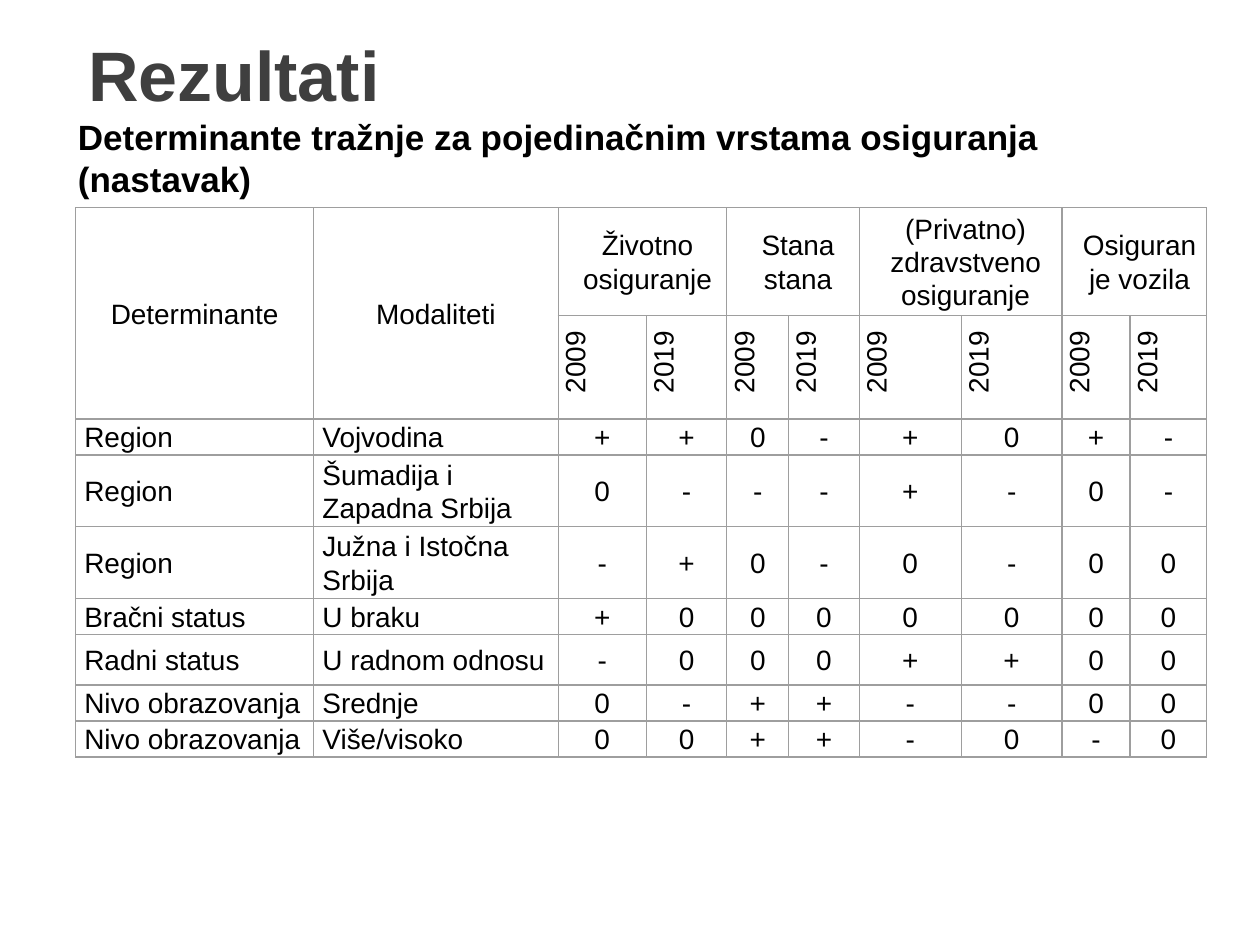
from lxml.etree import SubElement
from pptx import Presentation
from pptx.dml.color import RGBColor as RGB
from pptx.enum.text import MSO_ANCHOR as Anchor, PP_ALIGN as Align
from pptx.oxml import parse_xml
from pptx.oxml.ns import nsdecls, qn
from pptx.util import Inches, Pt


def style(para, size, color, bold=False):
    for run in para.runs:
        font = run.font
        font.name, font.size, font.bold = "Arial", Pt(size), bold
        font.color.rgb = RGB.from_string(color)


deck = Presentation()
deck.slide_width, deck.slide_height = Inches(10), Inches(7.5)
slide = deck.slides.add_slide(deck.slide_layouts[5])

title = slide.shapes.title
title.left, title.top = Inches(0.6), Inches(0.2)
title.width, title.height = Inches(8.48), Inches(1.15)
frame = title.text_frame
frame.text = "Rezultati"
frame.vertical_anchor = Anchor.TOP
frame.paragraphs[0].alignment = Align.LEFT
style(frame.paragraphs[0], 40, "3F3F3F", True)

box = slide.shapes.add_textbox(Inches(0.52), Inches(0.87), Inches(9.13), Inches(0.77))
frame = box.text_frame
frame.word_wrap = True
frame.text = "Determinante tražnje za pojedinačnim vrstama osiguranja (nastavak)"
style(frame.paragraphs[0], 20, "000000", True)

kinds = ["Životno osiguranje", "Stana stana", "(Privatno) zdravstveno osiguranje", "Osiguranje vozila"]
data = [
    ("Region", "Vojvodina", "++0-+0+-"),
    ("Region", "Šumadija i Zapadna Srbija", "0---+-0-"),
    ("Region", "Južna i Istočna Srbija", "-+0-0-00"),
    ("Bračni status", "U braku", "+0000000"),
    ("Radni status", "U radnom odnosu", "-000++00"),
    ("Nivo obrazovanja", "Srednje", "0-++--00"),
    ("Nivo obrazovanja", "Više/visoko", "00++-0-0"),
]
head = ["Determinante", "Modaliteti"]
for kind in kinds:
    head += [kind, ""]
rows = [head, ["", ""] + ["2009", "2019"] * len(kinds)]
rows += [[name, mode, *signs] for name, mode, signs in data]

wide = [1.89, 1.94, 0.7, 0.64, 0.49, 0.56, 0.81, 0.8, 0.54, 0.61]
high = [0.85, 0.82, 0.19, 0.4, 0.4, 0.19, 0.4, 0.19, 0.19]
shape = slide.shapes.add_table(
    len(rows), len(wide), Inches(0.6), Inches(1.65), Inches(sum(wide)), Inches(sum(high))
)
table = shape.table
table.first_row = table.horz_banding = False
for col, size in zip(table.columns, wide):
    col.width = Inches(size)
for row, size in zip(table.rows, high):
    row.height = Inches(size)

for c in range(2):
    table.cell(0, c).merge(table.cell(1, c))
for c in range(2, len(wide), 2):
    table.cell(0, c).merge(table.cell(0, c + 1))

for r, row in enumerate(rows):
    for c, text in enumerate(row):
        cell = table.cell(r, c)
        cell.fill.background()
        cell.vertical_anchor = Anchor.MIDDLE
        cell.margin_left = cell.margin_right = Inches(0.07)
        cell.margin_top = cell.margin_bottom = 0
        props = cell._tc.get_or_add_tcPr()
        for i, side in enumerate(["lnL", "lnR", "lnT", "lnB"]):
            line = parse_xml(f'<a:{side} {nsdecls("a")} w="{Pt(0.75)}"/>')
            fill = SubElement(line, qn("a:solidFill"))
            SubElement(fill, qn("a:srgbClr")).set("val", "9E9E9E")
            props.insert(i, line)
        if not text:
            continue
        cell.text_frame.text = text
        para = cell.text_frame.paragraphs[0]
        para.line_spacing = 1.07
        para.alignment = Align.CENTER if r < 2 or c > 1 else Align.LEFT
        if r < 2 and c > 1:
            para._p.get_or_add_pPr().set("marL", str(Inches(0.08)))
        if r == 1:
            props.set("vert", "vert270")
        style(para, 16, "000000")

deck.save("out.pptx")
